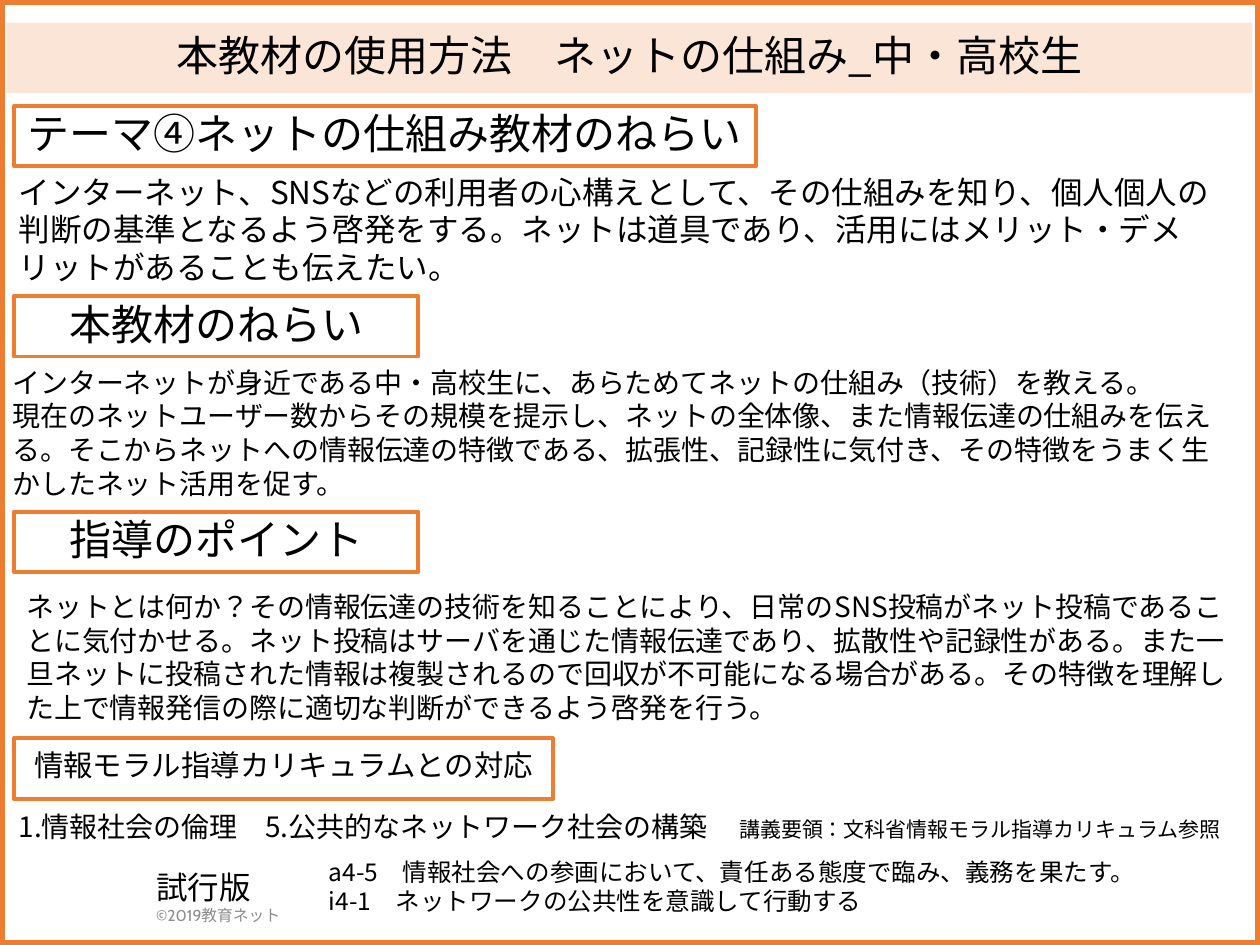
import pptx
import pptx.util
import pptx.dml.color
import pptx.enum.text
import pptx.enum.shapes
import pptx.enum.lang
import pptx.oxml.ns
import lxml.etree

Inches = pptx.util.Inches
Pt = pptx.util.Pt
RGBColor = pptx.dml.color.RGBColor
TEXT = pptx.enum.text

ORANGE = RGBColor(0xED, 0x7D, 0x31)
PEACH = RGBColor(0xFB, 0xE5, 0xD6)
BLACK = RGBColor(0, 0, 0)
GRAY = RGBColor(0x8C, 0x8C, 0x8C)
SANS = "Noto Sans CJK JP"
CABIN = "Cabin"

TITLE = "本教材の使用方法　ネットの仕組み_中・高校生"

HEADS = [
    (0.84, 5.89, "テーマ④ネットの仕組み教材のねらい", 24, 0.9),
    (2.35, 3.21, "本教材のねらい", 24, 0.9),
    (4.06, 3.21, "指導のポイント", 24, 0.9),
    (5.86, 4.28, "情報モラル指導カリキュラムとの対応", 16.8, 0.7),
]

BODIES = [
    ((0.05, 1.32, 9.83, 1.01), 18, [
        "インターネット、SNSなどの利用者の心構えとして、その仕組みを知り、個人個人の",
        "判断の基準となるよう啓発をする。ネットは道具であり、活用にはメリット・デメリットがあることも伝えたい。",
    ]),
    ((0, 2.85, 9.75, 1.18), 16, [
        "インターネットが身近である中・高校生に、あらためてネットの仕組み（技術）を教える。",
        "現在のネットユーザー数からその規模を提示し、ネットの全体像、また情報伝達の仕組みを伝える。"
        "そこからネットへの情報伝達の特徴である、拡張性、記録性に気付き、その特徴をうまく生かしたネット活用を促す。",
    ]),
    ((0.11, 4.63, 9.89, 1.18), 16, [
        "ネットとは何か？その情報伝達の技術を知ることにより、日常のSNS投稿がネット投稿であることに気付かせる。"
        "ネット投稿はサーバを通じた情報伝達であり、拡散性や記録性がある。"
        "また一旦ネットに投稿された情報は複製されるので回収が不可能になる場合がある。"
        "その特徴を理解した上で情報発信の際に適切な判断ができるよう啓発を行う。",
    ]),
    ((2.51, 6.75, 8.01, 0.57), 14, [
        "a4-5　情報社会への参画において、責任ある態度で臨み、義務を果たす。",
        "i4-1　ネットワークの公共性を意識して行動する",
    ]),
]

UNITS = [
    ("1.情報社会の倫理　5.公共的なネットワーク社会の構築", 16),
    ("　", 18),
    ("講義要領：文科省情報モラル指導カリキュラム参照", 12),
]


def style(run, size, color=BLACK, face=SANS):
    font = run.font
    font.size = Pt(size)
    font.color.rgb = color
    font.name = face
    font.language_id = pptx.enum.lang.MSO_LANGUAGE_ID.JAPANESE
    east = lxml.etree.SubElement(run._r.get_or_add_rPr(), pptx.oxml.ns.qn("a:ea"))
    east.set("typeface", SANS)


def add_rect(slide, spot, fill=None, width=None):
    kind = pptx.enum.shapes.MSO_SHAPE.RECTANGLE
    rect = slide.shapes.add_shape(kind, *map(Inches, spot))
    rect.shadow.inherit = False
    if fill is None:
        rect.fill.background()
    else:
        rect.fill.solid()
        rect.fill.fore_color.rgb = fill
    if width is None:
        rect.line.fill.background()
    else:
        rect.line.color.rgb = ORANGE
        rect.line.width = Pt(width)
    return rect


def add_label(rect, text, size, space):
    frame = rect.text_frame
    frame.word_wrap = True
    frame.vertical_anchor = TEXT.MSO_ANCHOR.MIDDLE
    frame.text = text
    para = frame.paragraphs[0]
    para.alignment = TEXT.PP_ALIGN.CENTER
    para.line_spacing = space
    style(para.runs[0], size)


def add_text(slide, spot, paras):
    frame = slide.shapes.add_textbox(*map(Inches, spot)).text_frame
    frame.word_wrap = True
    frame.auto_size = TEXT.MSO_AUTO_SIZE.SHAPE_TO_FIT_TEXT
    for i, runs in enumerate(paras):
        para = frame.add_paragraph() if i else frame.paragraphs[0]
        for text, *look in runs:
            run = para.add_run()
            run.text = text
            style(run, *look)


def main():
    deck = pptx.Presentation()
    deck.slide_width, deck.slide_height = Inches(10), Inches(7.5)
    slide = deck.slides.add_slide(deck.slide_layouts[6])

    add_rect(slide, (0, 0, 10, 7.5), width=6)
    add_text(slide, (1.14, 6.84, 2.89, 0.57), [
        [("試行版", 18, BLACK, CABIN)],
        [("©2019教育ネット", 9, GRAY, CABIN)],
    ])
    add_label(add_rect(slide, (0.05, 0.18, 9.89, 0.56), PEACH), TITLE, 24, 0.9)
    for top, width, text, size, space in HEADS:
        rect = add_rect(slide, (0.11, top, width, 0.48), width=2.25)
        add_label(rect, text, size, space)
    for spot, size, lines in BODIES:
        add_text(slide, spot, [[(line, size)] for line in lines])
    add_text(slide, (0.05, 6.35, 10.47, 0.4), [UNITS])

    deck.save("out.pptx")


if __name__ == "__main__":
    main()
